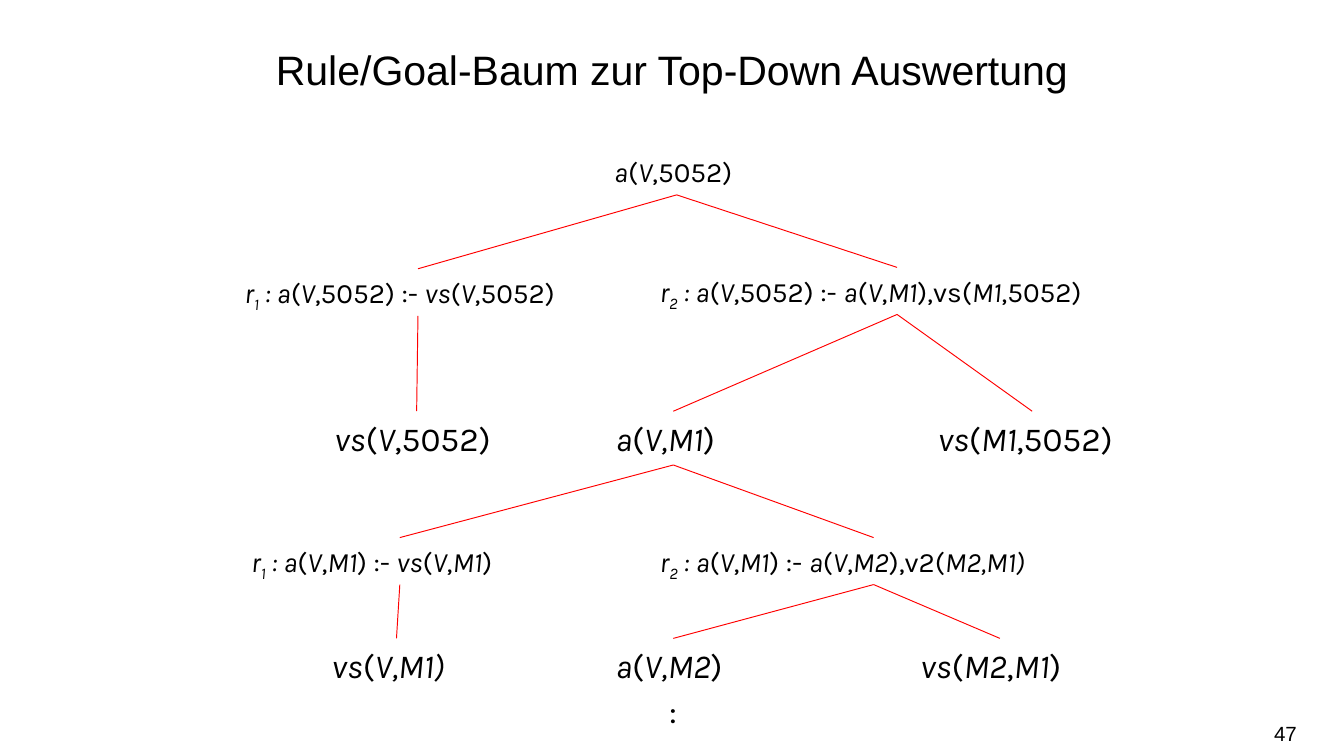
"""Build a slide showing the rule/goal tree, with labels in *italic* and ~subscript~ markup."""
from lxml import etree
from pptx import Presentation
from pptx import util as u
from pptx.dml.color import RGBColor
from pptx.enum import shapes, text
from pptx.oxml.ns import qn

BLACK = RGBColor(0, 0, 0)
RED = RGBColor(255, 0, 0)
WIDTH = 10
HEIGHT = WIDTH * 9 / 16
RULE_SIZE, GOAL_SIZE = 15, 18
BOX_HEIGHT = {RULE_SIZE: 0.35, GOAL_SIZE: 0.4}

TITLE = "Rule/Goal-Baum zur Top-Down Auswertung"
PAGE = "47"

LEVELS = [
    (1.1, RULE_SIZE, {"root": (4.47, 1.13, "*a*(*V*,5052)")}),
    (2, RULE_SIZE, {
        "r1": (1.72, 2.78, "*r~1~ : a*(*V*,5052) :- *vs*(*V*,5052)"),
    }),
    (1.99, RULE_SIZE, {
        "r2": (4.81, 3.73, "*r~2~ : a*(*V*,5052) :- *a*(*V*,*M1*),vs(*M1*,5052)"),
    }),
    (3.06, GOAL_SIZE, {
        "vs V": (2.39, 1.42, "*vs*(*V*,5052)"),
        "a M1": (4.48, 1.06, "*a*(*V,M1*)"),
        "vs M1": (6.88, 1.6, "*vs*(*M1*,5052)"),
    }),
    (4, RULE_SIZE, {
        "r1 M1": (1.77, 2.41, "*r~1~ : a*(*V*,*M1*) :- *vs*(*V*,*M1*)"),
        "r2 M1": (4.81, 3.38, "*r~2~ : a*(*V*,*M1*) :- *a*(*V*,*M2*),v2(*M2,M1)*"),
    }),
    (4.75, GOAL_SIZE, {
        "vs V M1": (2.37, 1.16, "*vs*(*V,M1)*"),
        "a M2": (4.48, 1.06, "*a*(*V,M2*)"),
        "vs M2": (6.75, 1.38, "*vs*(*M2*,*M1*)"),
    }),
    (5.09, GOAL_SIZE, {"further": (4.88, 0.29, ":")}),
]
CHILDREN = {
    "root": ["r1", "r2"],
    "r1": ["vs V"],
    "r2": ["a M1", "vs M1"],
    "a M1": ["r1 M1", "r2 M1"],
    "r1 M1": ["vs V M1"],
    "r2 M1": ["a M2", "vs M2"],
}


def add_label(slide, place, label, size, font="Karla", align=None, wrap=False):
    frame = slide.shapes.add_textbox(*map(u.Inches, place)).text_frame
    frame.word_wrap = wrap
    if wrap:
        frame.vertical_anchor = text.MSO_ANCHOR.MIDDLE
    else:
        frame.auto_size = text.MSO_AUTO_SIZE.SHAPE_TO_FIT_TEXT
    paragraph = frame.paragraphs[0]
    paragraph.alignment = align
    for i, styled in enumerate(label.split("*")):
        for j, part in enumerate(styled.split("~")):
            if part:
                run = paragraph.add_run()
                run.text = part
                run.font.name, run.font.size = font, u.Pt(size)
                run.font.italic = i % 2 == 1
                run.font.color.rgb = BLACK
                if j % 2:
                    run._r.get_or_add_rPr().set("baseline", "-25000")
    return frame


def add_edge(slide, start, end):
    edge = slide.shapes.add_connector(
        shapes.MSO_CONNECTOR.STRAIGHT, *map(u.Inches, start + end))
    edge.line.color.rgb = RED
    edge.line.width = u.Pt(0.5)
    etree.SubElement(edge._element.spPr, qn("a:effectLst"))


def main():
    deck = Presentation()
    deck.slide_width, deck.slide_height = u.Inches(WIDTH), u.Inches(HEIGHT)
    slide = deck.slides.add_slide(deck.slide_layouts[6])

    title = add_label(slide, (0, 0, WIDTH, 0.94), TITLE, 22, "Arial",
                      text.PP_ALIGN.CENTER, True)
    title.paragraphs[0].line_spacing = 1.25

    tops, bottoms = {}, {}
    for top, size, nodes in LEVELS:
        height = BOX_HEIGHT[size]
        for node, (left, width, label) in nodes.items():
            add_label(slide, (left, top, width, height), label, size)
            center = left + width / 2
            tops[node], bottoms[node] = (center, top), (center, top + height)

    for parent, children in CHILDREN.items():
        for child in children:
            add_edge(slide, bottoms[parent], tops[child])

    page = add_label(slide, (7.41, 5.31, 2.24, 0.3), PAGE, 11, "Arial",
                     text.PP_ALIGN.RIGHT, True)
    page.margin_left = page.margin_right = 0
    deck.save("out.pptx")


if __name__ == "__main__":
    main()
